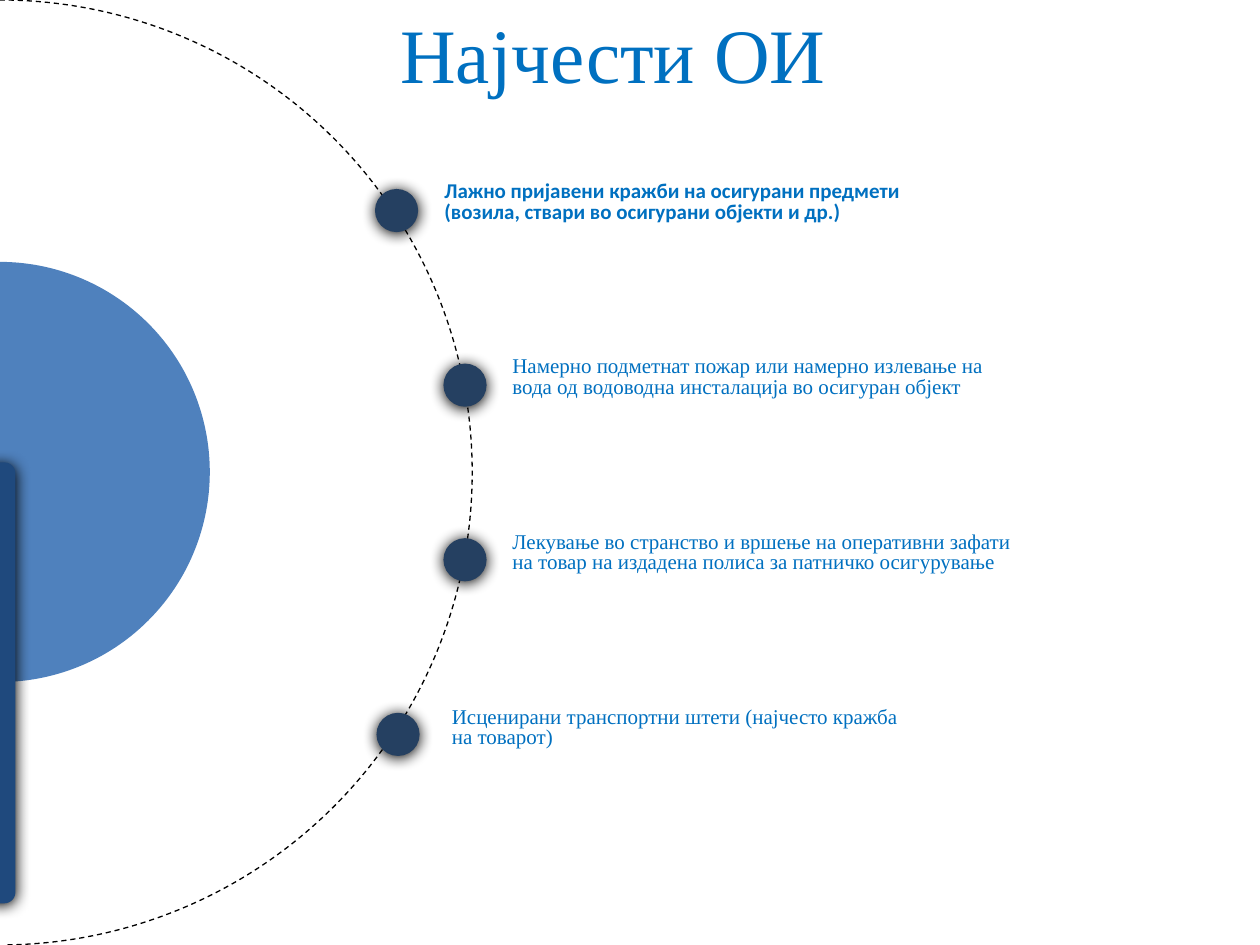
from lxml.etree import SubElement
from pptx import Presentation
from pptx.dml.color import RGBColor
from pptx.enum.dml import MSO_LINE_DASH_STYLE as Dash
from pptx.enum.shapes import MSO_AUTO_SHAPE_TYPE as Preset
from pptx.enum.text import MSO_AUTO_SIZE as AutoSize
from pptx.oxml.ns import qn
from pptx.util import Cm, Pt

COLORS = {
    "paper": "FFFFFF",
    "text": "0070C0",
    "dot": "254061",
    "disc": "4F81BD",
    "bar": "1F497D",
    "black": "000000",
}
SERIF = "Times New Roman"
TITLE_FORMAT = {"name": SERIF, "size": Pt(44)}
ITEM_FORMAT = {"name": SERIF, "size": Pt(12)}
LEAD_FORMAT = {"name": "Calibri", "size": Pt(12), "bold": True}
DOT_SIZE = 0.87
DOT_TOP = 3.81
TEXT_TOP = 3.56
ROW_STEP = 3.53
DOT_STEP = 3.52
TEXT_HEIGHT = 1.08
ITEMS = [
    (7.56, 8.71, 10.67, LEAD_FORMAT,
     "Лажно пријавени кражби на осигурани предмети (возила, ствари во осигурани објекти и др.)"),
    (8.94, 10.08, 10.67, ITEM_FORMAT,
     "Намерно подметнат пожар или намерно излевање на вода од водоводна инсталација во осигуран објект"),
    (8.94, 10.08, 10.67, ITEM_FORMAT,
     "Лекување во странство и вршење на оперативни зафати на товар на издадена полиса за патничко осигурување"),
    (7.59, 8.86, 9.58, ITEM_FORMAT,
     "Исценирани транспортни штети (најчесто кражба на товарот)"),
]


def color(name):
    """Return the named palette colour."""
    return RGBColor.from_string(COLORS[name])


def add_figure(page, preset, place, fill, adjustments=()):
    """Add a flat preset shape without an outline."""
    figure = page.shapes.add_shape(preset, *map(Cm, place))
    for index, value in enumerate(adjustments):
        figure.adjustments[index] = value
    figure.fill.solid()
    figure.fill.fore_color.rgb = color(fill)
    figure.line.fill.background()
    figure.shadow.inherit = False
    return figure


def add_shadow(figure):
    """Give a shape a soft shadow just below it."""
    effects = figure._element.spPr.find(qn("a:effectLst"))
    values = {"blurRad": Pt(8.5), "dist": Pt(1), "dir": 90 * 60000, "rotWithShape": 0}
    shadow = SubElement(effects, qn("a:outerShdw"))
    for key, value in values.items():
        shadow.set(key, str(int(value)))
    SubElement(shadow, qn("a:srgbClr")).set("val", COLORS["black"])


def add_text(page, place, text, font_format, spacing=None):
    """Add a wrapping one-paragraph text box."""
    box = page.shapes.add_textbox(*map(Cm, place))
    frame = box.text_frame
    frame.word_wrap = True
    frame.auto_size = AutoSize.SHAPE_TO_FIT_TEXT
    para = frame.paragraphs[0]
    para.line_spacing = spacing
    span = para.add_run()
    span.text = text
    for key, value in font_format.items():
        setattr(span.font, key, value)
    span.font.color.rgb = color("text")


def add_orbit(page):
    """Add the large dashed half circle."""
    orbit = add_figure(page, Preset.ARC, (-9.53, 0, 19.05, 19.05), "paper", (162, 53.71))
    orbit.line.color.rgb = color("black")
    orbit.line.width = Pt(0.75)
    orbit.line.dash_style = Dash.DASH


def add_bar(page):
    """Add the upright rounded bar at the left edge."""
    bar = add_figure(page, Preset.ROUNDED_RECTANGLE, (-0.33, 9.32, 0.64, 8.89), "bar", (0.35,))
    bar.rotation = 180
    add_shadow(bar)


def main():
    """Build the slide and save it."""
    deck = Presentation()
    deck.slide_width, deck.slide_height = Cm(25.4), Cm(19.05)
    page = deck.slides.add_slide(deck.slide_layouts[6])
    add_orbit(page)
    for row, (dot_left, text_left, width, font_format, text) in enumerate(ITEMS):
        add_text(page, (text_left, TEXT_TOP + row * ROW_STEP, width, TEXT_HEIGHT),
                 text, font_format, 0.8)
        dot = add_figure(page, Preset.OVAL,
                         (dot_left, DOT_TOP + row * DOT_STEP, DOT_SIZE, DOT_SIZE), "dot")
        add_shadow(dot)
    add_figure(page, Preset.ARC, (-4.24, 5.28, 8.47, 8.47), "disc", (162, 53.6))
    add_bar(page)
    add_text(page, (7.82, 0, 11, 2.14), "Најчести ОИ", TITLE_FORMAT)
    deck.save("out.pptx")


if __name__ == "__main__":
    main()
